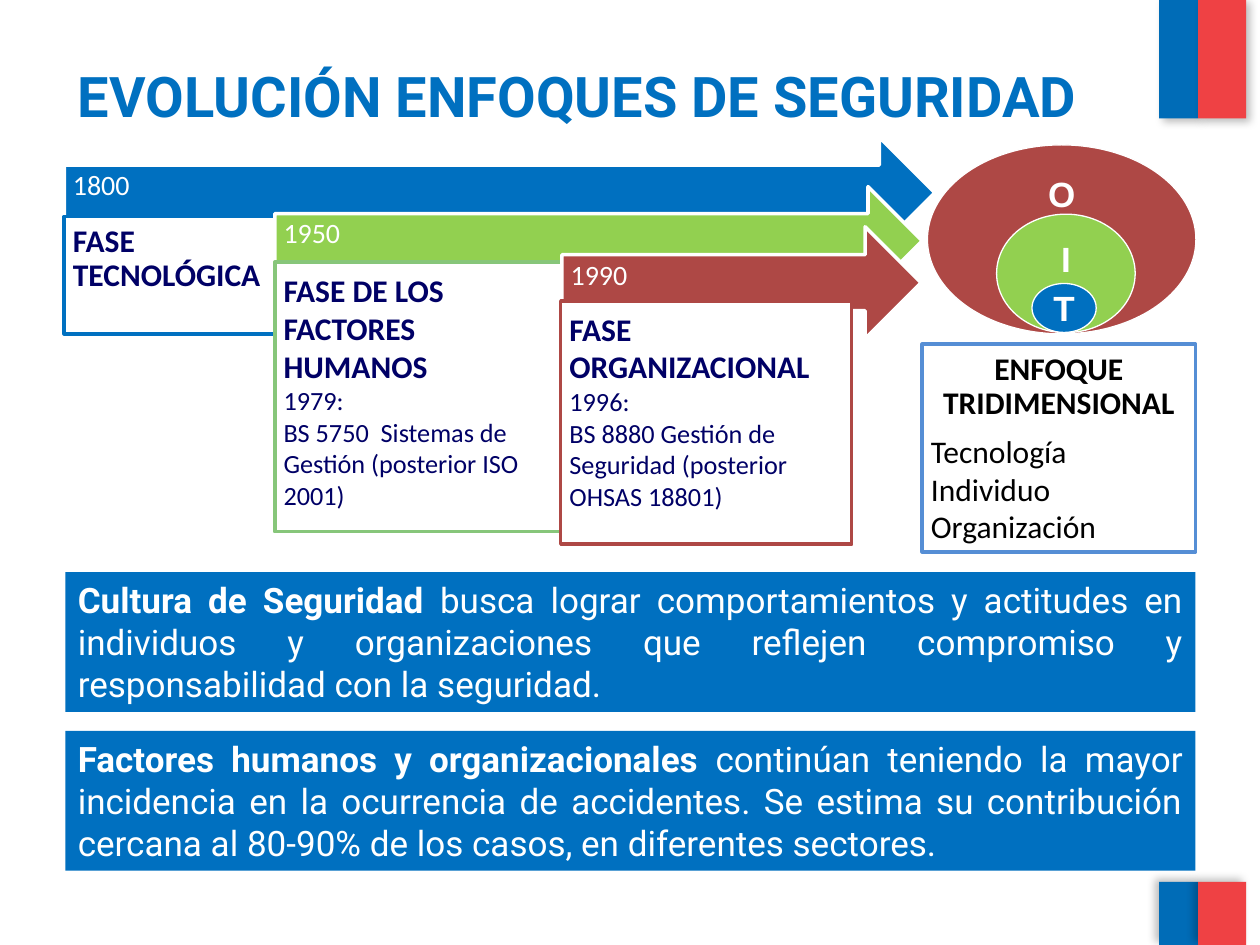
from lxml import etree
from pptx import Presentation
from pptx.dml import color
from pptx.enum import shapes, text
from pptx.oxml import ns
from pptx.util import Pt

KIND = shapes.MSO_SHAPE
ALIGN = text.PP_ALIGN
ANCHOR = text.MSO_ANCHOR
BLUE, GREEN, RED, NAVY = "0070C0", "92D050", "AE4845", "000066"
WHITE, BLACK = "FFFFFF", "000000"
PAD = (5, 5, 5, 5)

TITLE = "EVOLUCIÓN ENFOQUES DE SEGURIDAD"

# Each phase: year, arrow place, arrow fill, box place, box line, heading, details
PHASES = [
    ("1800", (36.7, 78.5, 497.5, 63.4), BLUE,
     (36.7, 123.8, 125.3, 67), BLUE, "FASE TECNOLÓGICA", []),
    ("1950", (157, 106.6, 370, 62), GREEN,
     (157, 149.8, 164.9, 154), "87C67A", "FASE DE LOS FACTORES HUMANOS",
     ["1979:", "BS 5750  Sistemas de Gestión (posterior ISO 2001)"]),
    ("1990", (321.1, 129.6, 205.2, 64), RED,
     (320.4, 172, 166.3, 139), RED, "FASE ORGANIZACIONAL",
     ["1996:", "BS 8880 Gestión de Seguridad (posterior OHSAS 18801)"]),
]

# Each ring: letter, place, fill, insets, anchor, space before
RINGS = [
    ("O", (530, 82.8, 153.4, 108), RED, (6, 0, 6, 3), ANCHOR.TOP, 0),
    ("I", (569.5, 122.4, 79.2, 67.7), GREEN, (7.2, 3.6, 7.2, 3.6), ANCHOR.TOP, 4),
    ("T", (589.7, 162, 36.7, 28), BLUE, (3, 0, 3, 0), ANCHOR.MIDDLE, 4),
]

FOCUS = "ENFOQUE TRIDIMENSIONAL"
PARTS = ["Tecnología", "Individuo", "Organización"]

BANNERS = [
    ("Cultura de Seguridad ",
     "busca lograr comportamientos y actitudes en individuos y organizaciones "
     "que reflejen compromiso y responsabilidad con la seguridad."),
    ("Factores humanos y organizacionales ",
     "continúan teniendo la mayor incidencia en la ocurrencia de accidentes. "
     "Se estima su contribución cercana al 80-90% de los casos, en diferentes sectores."),
]

FLAGS = [(-0.7, 68.4, 45), (504, 36, 215)]  # top, height, shadow angle
BANDS = [(662.4, 22.3, "006CB7"), (684.7, 27.4, "EF4144")]  # left, width, fill


def rgb(code):
    return color.RGBColor.from_string(code)


def draw(kind, place, fill, line=None, width=2):
    shape = slide.shapes.add_shape(kind, *map(Pt, place))
    shape.shadow.inherit = False
    shape.fill.solid()
    shape.fill.fore_color.rgb = rgb(fill)
    if line:
        shape.line.color.rgb = rgb(line)
        shape.line.width = Pt(width)
    else:
        shape.line.fill.background()
    return shape


def cast(shape, angle):
    """Give the shape a soft outer shadow."""
    effects = shape._element.spPr.find(ns.qn("a:effectLst"))
    outer = etree.SubElement(
        effects, ns.qn("a:outerShdw"), blurRad=str(Pt(5)), dist=str(Pt(3)),
        dir=str(angle * 60000), algn="ctr", rotWithShape="0")
    tone = etree.SubElement(outer, ns.qn("a:srgbClr"), val=BLACK)
    etree.SubElement(tone, ns.qn("a:alpha"), val="25000")


def write(shape, paras, font, ink, insets=(7.2, 3.6, 7.2, 3.6), anchor=ANCHOR.TOP):
    """Fill a shape with (runs, align, line spacing, before, after) paragraphs;
    a run is (words, size, bold)."""
    frame = shape.text_frame
    frame.word_wrap = True
    frame.vertical_anchor = anchor
    (frame.margin_left, frame.margin_top,
     frame.margin_right, frame.margin_bottom) = map(Pt, insets)
    for i, (runs, align, lead, before, after) in enumerate(paras):
        para = frame.add_paragraph() if i else frame.paragraphs[0]
        para.alignment = align
        para.line_spacing = lead
        para.space_before, para.space_after = Pt(before), Pt(after)
        for words, size, bold in runs:
            run = para.add_run()
            run.text = words
            run.font.name = font
            run.font.size = Pt(size)
            run.font.bold = bold
            run.font.color.rgb = rgb(ink)


def plain(words, size, bold=False, align=ALIGN.LEFT, lead=1.0, before=0, after=0):
    """One paragraph of one run."""
    return [(words, size, bold)], align, lead, before, after


def ring(letter, place, fill, insets, anchor, before):
    shape = draw(KIND.OVAL, place, fill, WHITE, 0.75)
    write(shape, [plain(letter, 20, True, ALIGN.CENTER, before=before)],
          "Arial", WHITE, insets, anchor)


deck = Presentation()
deck.slide_width, deck.slide_height = Pt(720), Pt(540)
slide = deck.slides.add_slide(deck.slide_layouts[6])

for top, height, angle in FLAGS:
    for left, width, fill in BANDS:
        cast(draw(KIND.RECTANGLE, (left, top, width, height), fill), angle)

ring(*RINGS[0])

for year, place, fill, spot, edge, head, notes in PHASES:
    arrow = draw(KIND.RIGHT_ARROW, place, fill, WHITE)
    write(arrow, [plain(year, 16, lead=0.9, after=5.6)],
          "Calibri", WHITE, (5, 5, 20, 12), ANCHOR.MIDDLE)
    box = draw(KIND.RECTANGLE, spot, WHITE, edge)
    lead = 1.0 if notes else 0.9
    write(box, [plain(head, 18, True, lead=lead)] + [plain(n, 15) for n in notes],
          "Calibri", NAVY, PAD)

for i, (lead, rest) in enumerate(BANNERS):
    banner = draw(KIND.RECTANGLE, (37.4, 326.9 + 90.7 * i, 645.8, 79.9), BLUE)
    write(banner, [([(lead, 20, True), (rest, 20, False)], ALIGN.JUSTIFY, 1.0, 0, 0)],
          "Roboto", WHITE)

for item in RINGS[1:]:
    ring(*item)

focus = draw(KIND.RECTANGLE, (527, 196.6, 156.2, 118.8), WHITE, "558ED5")
write(focus, [plain(FOCUS, 18, True, ALIGN.CENTER, 0.9, after=6.3)]
      + [plain(p, 18) for p in PARTS], "Calibri", BLACK, PAD)

title = slide.shapes.add_textbox(*map(Pt, (0, 31.7, 660.2, 59.8)))
write(title, [plain(TITLE, 32, True, ALIGN.CENTER)], "Roboto", BLUE)

deck.save("out.pptx")
